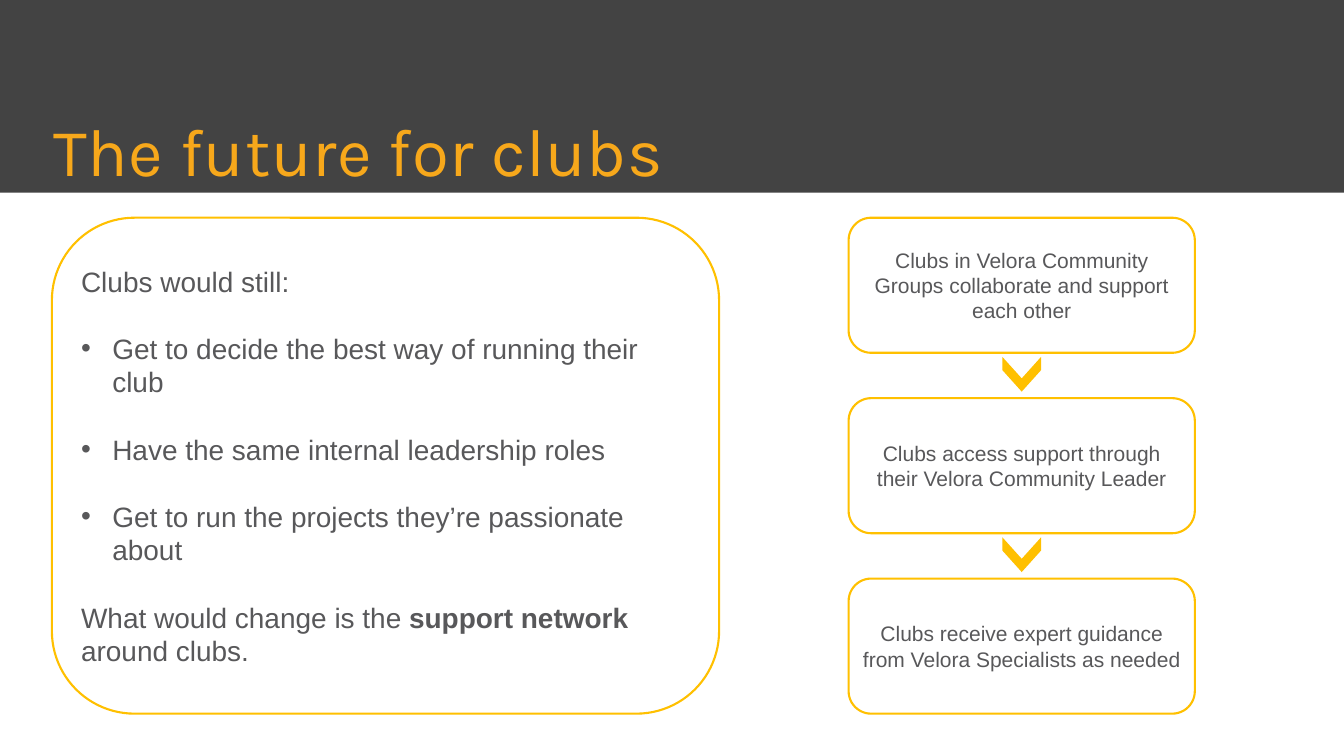
import pptx
import pptx.util
import pptx.dml.color
import pptx.enum.shapes
import pptx.enum.text
from lxml import etree

PX = 9144  # EMU, 100 px to the inch
COLORS = {"band": "434343", "title": "F7A81B", "accent": "FFC000", "body": "58585A"}
SHAPES = pptx.enum.shapes.MSO_SHAPE
ALIGN = pptx.enum.text.PP_ALIGN
MIDDLE = pptx.enum.text.MSO_ANCHOR.MIDDLE


def px(*lengths):
    return [pptx.util.Emu(length * PX) for length in lengths]


def color(name):
    return pptx.dml.color.RGBColor.from_string(COLORS[name])


class Deck:
    def __init__(self, width, height):
        self.file = pptx.Presentation()
        self.file.slide_width, self.file.slide_height = px(width, height)
        self.slide = self.file.slides.add_slide(self.file.slide_layouts[6])

    def block(self, kind, box, fill=None, line=None):
        shape = self.slide.shapes.add_shape(kind, *px(*box))
        shape.shadow.inherit = False
        if fill:
            shape.fill.solid()
            shape.fill.fore_color.rgb = color(fill)
        else:
            shape.fill.background()
        if line:
            shape.line.color.rgb = color(line)
            shape.line.width = pptx.util.Pt(3)
        else:
            shape.line.fill.background()
        return shape

    def frame(self, shape, side, top):
        frame = shape.text_frame
        frame.word_wrap = True
        frame.vertical_anchor = MIDDLE
        frame.margin_left, frame.margin_right = px(side, side)
        frame.margin_top, frame.margin_bottom = px(top, top)
        return frame

    def run(self, paragraph, text, size, font="Arial", tone="body", bold=None):
        run = paragraph.add_run()
        run.text = text
        run.font.size = pptx.util.Pt(size)
        run.font.name = font
        run.font.bold = bold
        run.font.color.rgb = color(tone)
        return run

    def title(self, text, box):
        heading = self.slide.shapes.add_textbox(*px(*box))
        paragraph = self.frame(heading, 6, 6).paragraphs[0]
        paragraph.line_spacing = 0.7
        paragraph._p.get_or_add_pPr().set("marL", str(100 * PX))
        run = self.run(paragraph, text, 96, "Karla", "title")
        run.font._element.set("spc", "90")

    def card(self, box, paragraphs, size, align):
        """Rounded outline; each paragraph is (bulleted, [(text, bold), ...])."""
        shape = self.block(SHAPES.ROUNDED_RECTANGLE, box, line="accent")
        frame = self.frame(shape, 10, 39)
        line_height = pptx.util.Pt(size * 1.2)
        for index, (bulleted, runs) in enumerate(paragraphs):
            paragraph = frame.add_paragraph() if index else frame.paragraphs[0]
            paragraph.alignment = align
            paragraph.line_spacing = line_height
            if index:
                paragraph.space_before = line_height
            if bulleted:
                self.bullet(paragraph, 62)
            for text, bold in runs:
                self.run(paragraph, text, size, bold=bold)

    def bullet(self, paragraph, indent):
        properties = paragraph._p.get_or_add_pPr()
        properties.set("marL", str(indent * PX))
        properties.set("indent", str(-indent * PX))
        for tag, key, value in (("a:buFont", "typeface", "Arial"), ("a:buChar", "char", "•")):
            etree.SubElement(properties, pptx.oxml.ns.qn(tag)).set(key, value)

    def down_chevron(self, box):
        chevron = self.block(SHAPES.CHEVRON, box, fill="accent")
        chevron.adjustments[0] = 0.62
        chevron.rotation = 90


def main():
    deck = Deck(2667, 1500)
    deck.block(SHAPES.RECTANGLE, (0, 0, 2667, 382), fill="band")
    deck.title("The future for clubs", (0, 250, 2439, 132))

    unchanged = [
        "Get to decide the best way of running their club",
        "Have the same internal leadership roles",
        "Get to run the projects they’re passionate about",
    ]
    promise = [(False, [("Clubs would still:", None)])]
    promise += [(True, [(text, None)]) for text in unchanged]
    promise.append((False, [("What would change is the ", None),
                            ("support network ", True), ("around clubs.", False)]))
    deck.card((103, 432, 1324, 984), promise, 40, ALIGN.LEFT)

    support_steps = [
        "Clubs in Velora Community Groups collaborate and support each other",
        "Clubs access support through their Velora Community Leader",
        "Clubs receive expert guidance from Velora Specialists as needed",
    ]
    top, pitch = 432, 358
    for index, step in enumerate(support_steps):
        step_top = top + index * pitch
        deck.card((1684, step_top, 687, 268), [(False, [(step, None)])], 30, ALIGN.CENTER)
        if index:
            deck.down_chevron((1993, step_top - 86, 69, 77))

    deck.file.save("out.pptx")


if __name__ == "__main__":
    main()
